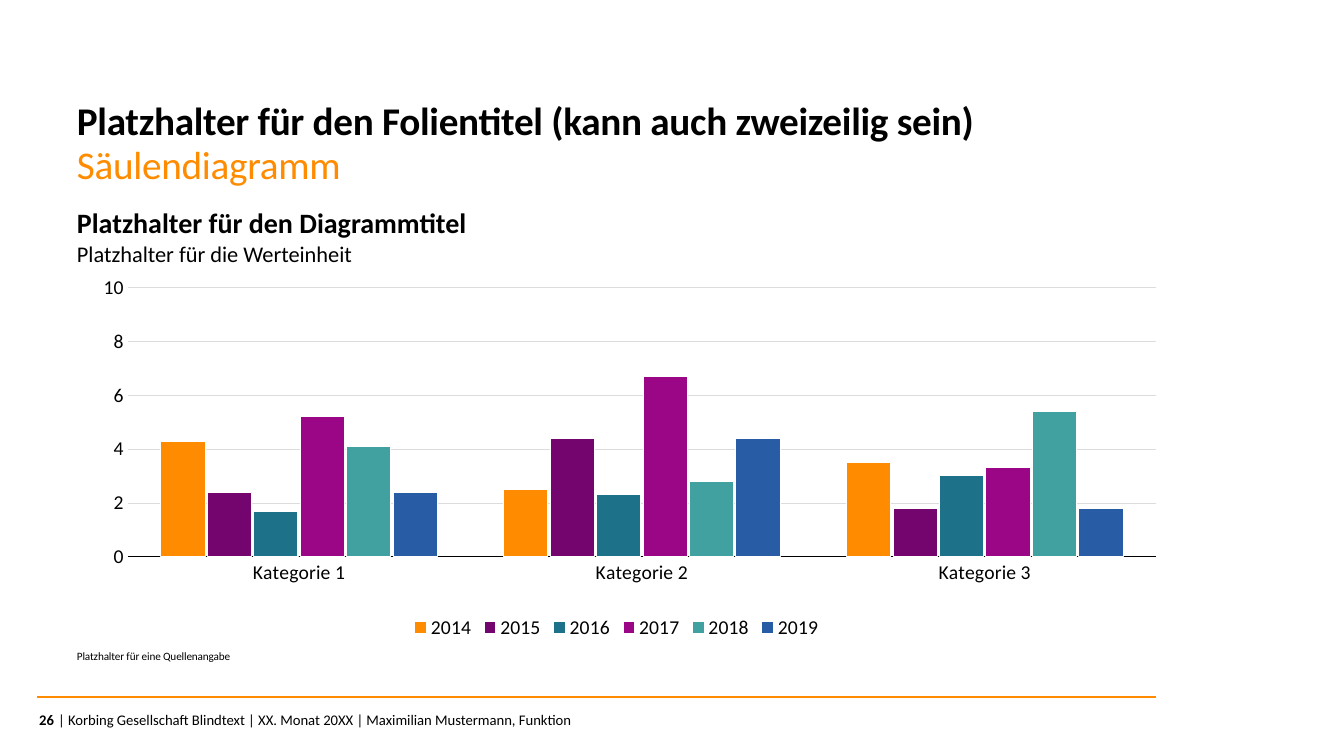
from lxml import etree
from pptx import Presentation
from pptx.chart.data import CategoryChartData
from pptx.dml.color import RGBColor
from pptx.enum.chart import XL_CHART_TYPE, XL_LEGEND_POSITION, XL_TICK_MARK
from pptx.enum.shapes import MSO_CONNECTOR
from pptx.enum.text import MSO_ANCHOR, MSO_AUTO_SIZE, PP_ALIGN
from pptx.oxml import parse_xml
from pptx.oxml.ns import nsdecls, qn
from pptx.util import Emu, Pt

COLUMNS = XL_CHART_TYPE.COLUMN_CLUSTERED
BOTTOM_LEGEND = XL_LEGEND_POSITION.BOTTOM
NO_TICKS = XL_TICK_MARK.NONE
STRAIGHT = MSO_CONNECTOR.STRAIGHT
TOP, MIDDLE, BOTTOM = MSO_ANCHOR.TOP, MSO_ANCHOR.MIDDLE, MSO_ANCHOR.BOTTOM
LEFT, RIGHT = PP_ALIGN.LEFT, PP_ALIGN.RIGHT
GROW = MSO_AUTO_SIZE.SHAPE_TO_FIT_TEXT

FONT = "Calibri"
BLACK, WHITE, ORANGE, GRID = "000000", "FFFFFF", "FF8C00", "DCDCDC"
EMU_PER_INCH, PX_PER_INCH = 914400, 100.8

CATEGORIES = ["Kategorie 1", "Kategorie 2", "Kategorie 3"]
SERIES = [
    ("2014", [4.3, 2.5, 3.5], ORANGE),
    ("2015", [2.4, 4.4, 1.8], "74056F"),
    ("2016", [1.7, 2.3, 3], "1D728A"),
    ("2017", [5.2, 6.7, 3.3], "9B0687"),
    ("2018", [4.1, 2.8, 5.4], "41A0A0"),
    ("2019", [2.4, 4.4, 1.8], "285DA6"),
]


def px(*lengths):
    return [Emu(round(length * EMU_PER_INCH / PX_PER_INCH)) for length in lengths]


def color(hex_string):
    return RGBColor.from_string(hex_string)


def set_line(line, hex_string, width):
    line.color.rgb = color(hex_string)
    line.width = Pt(width)


def write_text(frame, text, size=14, hex_string=BLACK, bold=False, align=LEFT,
               line_spacing=1.0, letter_spacing=0):
    """Letter spacing is given in hundredths of a point."""
    paragraph = frame.paragraphs[0]
    paragraph.alignment = align
    paragraph.line_spacing = line_spacing
    paragraph.space_before = Pt(0)
    run = paragraph.add_run()
    run.text = text
    run.font.name = FONT
    run.font.size = Pt(size)
    run.font.bold = bold
    run.font.color.rgb = color(hex_string)
    if letter_spacing:
        run.font._element.set("spc", str(letter_spacing))


class SlideBuilder:
    def __init__(self, presentation):
        self.slide = presentation.slides.add_slide(presentation.slide_layouts[6])

    def text(self, box, text, anchor=TOP, **text_format):
        frame = self.slide.shapes.add_textbox(*px(*box)).text_frame
        frame.margin_left = frame.margin_right = 0
        frame.margin_top = frame.margin_bottom = 0
        frame.word_wrap = True
        frame.auto_size = GROW
        frame.vertical_anchor = anchor
        write_text(frame, text, **text_format)

    def rule(self, start, end, hex_string, width):
        connector = self.slide.shapes.add_connector(STRAIGHT, *px(*start, *end))
        set_line(connector.line, hex_string, width)
        etree.SubElement(connector._element.spPr, qn("a:effectLst"))

    def column_chart(self, box, categories, series_rows, plot_area):
        data = CategoryChartData()
        data.categories = categories
        for name, values, _ in series_rows:
            data.add_series(name, values)
        chart = self.slide.shapes.add_chart(COLUMNS, *px(*box), data).chart
        chart.has_title = False
        chart.font.name = FONT
        chart.font.size = Pt(14)
        chart.font.color.rgb = color(BLACK)

        # Legend
        chart.has_legend = True
        chart.legend.position = BOTTOM_LEGEND
        chart.legend.include_in_layout = False

        # Axes
        category_axis, value_axis = chart.category_axis, chart.value_axis
        for axis in (category_axis, value_axis):
            axis.major_tick_mark = axis.minor_tick_mark = NO_TICKS
        set_line(category_axis.format.line, BLACK, 1)
        value_axis.format.line.fill.background()
        value_axis.minimum_scale, value_axis.maximum_scale = 0, 10
        value_axis.major_unit = 2
        value_axis.tick_labels.number_format = "0"
        value_axis.tick_labels.number_format_is_linked = False
        set_line(value_axis.major_gridlines.format.line, GRID, 0.5)

        # Columns
        plot = chart.plots[0]
        plot.gap_width, plot.overlap = 150, -5
        plot.vary_by_categories = False
        for series, (_, _, fill) in zip(plot.series, series_rows):
            series.invert_if_negative = False
            series.format.fill.solid()
            series.format.fill.fore_color.rgb = color(fill)
            set_line(series.format.line, WHITE, 0.75)

        self.place_plot(chart, plot_area)

    def place_plot(self, chart, fractions):
        area = chart._chartSpace.find(f".//{qn('c:plotArea')}")
        for layout in area.findall(qn("c:layout")):
            area.remove(layout)
        places = "".join(f'<c:{key} val="{value}"/>' for key, value in zip("xywh", fractions))
        area.insert(0, parse_xml(
            f'<c:layout {nsdecls("c")}><c:manualLayout><c:layoutTarget val="inner"/>'
            f'<c:xMode val="edge"/><c:yMode val="edge"/>{places}'
            "</c:manualLayout></c:layout>"))


def main():
    presentation = Presentation()
    presentation.slide_width, presentation.slide_height = px(1344, 756)
    builder = SlideBuilder(presentation)
    left, width = 77, 1080

    # Headings
    heading = {"size": 28, "line_spacing": 0.95, "letter_spacing": -20}
    builder.text((left, 100, width, 45),
                 "Platzhalter für den Folientitel (kann auch zweizeilig sein)",
                 bold=True, **heading)
    builder.text((left, 144, width, 45), "Säulendiagramm", hex_string=ORANGE, **heading)

    # Chart with its title, unit and source
    builder.text((left, 204, width, 34), "Platzhalter für den Diagrammtitel",
                 size=20, bold=True, line_spacing=1.05)
    builder.text((left, 239, width, 27), "Platzhalter für die Werteinheit",
                 size=16, line_spacing=1.05)
    builder.column_chart((left, 275, width, 369), CATEGORIES, SERIES,
                         plot_area=(0.047, 0.034, 0.953, 0.73))
    builder.text((left, 649, width, 14), "Platzhalter für eine Quellenangabe",
                 anchor=BOTTOM, size=8, line_spacing=1.05, letter_spacing=-10)

    # Footer
    builder.rule((37, 697), (1156, 697), ORANGE, 1)
    builder.text((22, 711, 32, 18), "26", anchor=MIDDLE, size=10.5, bold=True, align=RIGHT)
    builder.text((58, 711, 1096, 18),
                 "| Korbing Gesellschaft Blindtext | XX. Monat 20XX | Maximilian Mustermann, Funktion",
                 anchor=MIDDLE, size=10.5)

    presentation.save("out.pptx")


if __name__ == "__main__":
    main()
